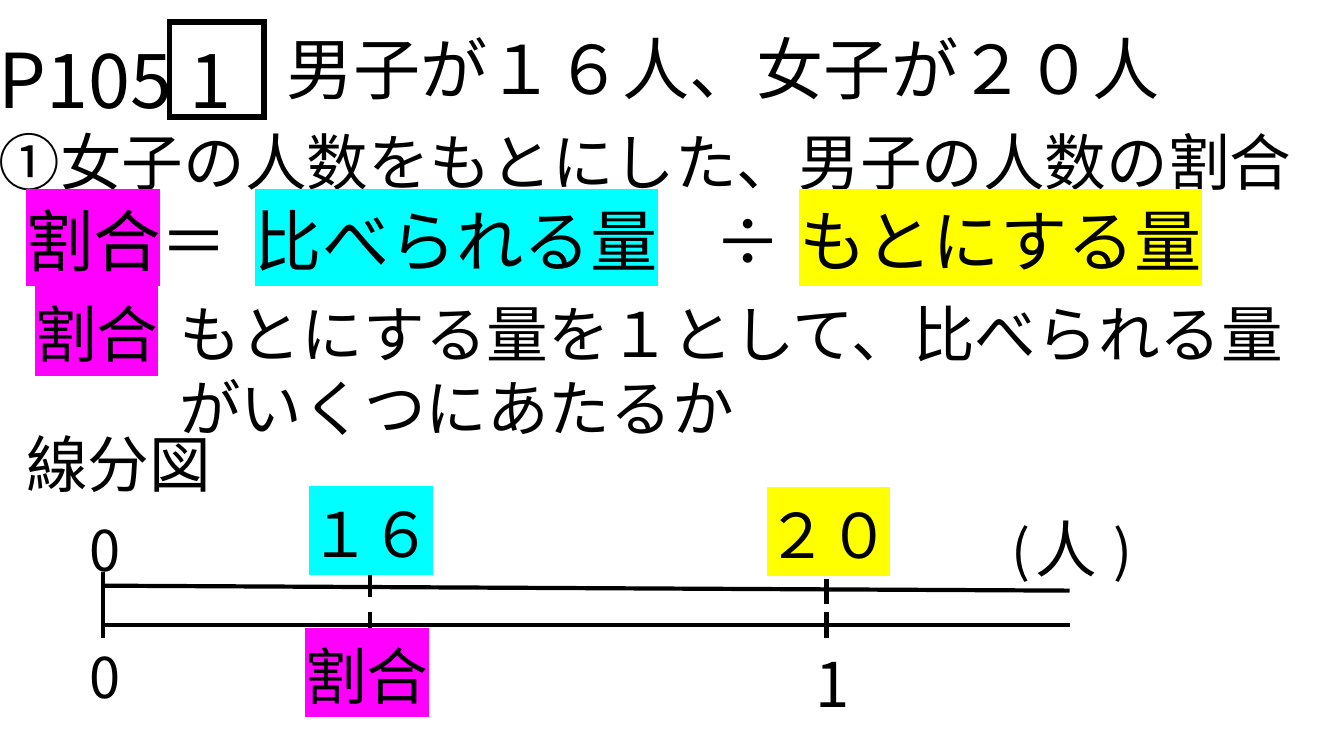
from dataclasses import dataclass
from typing import NamedTuple, Optional

from lxml.etree import SubElement
from pptx import Presentation
from pptx.dml.color import RGBColor
from pptx.enum.shapes import MSO_CONNECTOR as Connector, MSO_SHAPE as Preset
from pptx.enum.text import MSO_ANCHOR as Anchor, MSO_AUTO_SIZE as AutoSize, PP_ALIGN as Align
from pptx.oxml.ns import qn
from pptx.util import Inches, Pt


@dataclass(frozen=True)
class Theme:
    font: str = "Noto Sans CJK JP"
    ink: str = "000000"
    paper: str = "FFFFFF"
    ratio: str = "FF00FF"
    compared: str = "00FFFF"
    base: str = "FFFF00"
    page: int = 54
    large: int = 48
    normal: int = 44
    small: int = 40
    rule: int = 3
    frame: int = 4


class Box(NamedTuple):
    """Left, top, width and height in percent of the slide."""
    x: float
    y: float
    w: float
    h: float


class Line(NamedTuple):
    text: str
    size: int
    mark: Optional[str] = None


class Label(NamedTuple):
    box: Box
    lines: tuple[Line, ...]
    fill: Optional[str] = None


class Rule(NamedTuple):
    """End points in percent of the slide."""
    x1: float
    y1: float
    x2: float
    y2: float


T = Theme()
WIDTH, HEIGHT = Inches(13.33), Inches(7.5)

# Shared rows and columns, in percent of the slide
FORMULA, DEFINITION = 25.73, 38.53
TALL, MEDIUM, SHORT = 12.13, 11.2, 10.27
WORD = 10.75
ZERO, SIXTEEN, TWENTY, END = 7.65, 27.53, 61.5, 79.58
UPPER, LOWER, FOOT = 77.47, 82.67, 84.4

TITLE = Label(Box(20.55, 2.93, 73.88, TALL), (Line("男子が１６人、女子が２０人", T.large),))
NUMBER_FRAME = Box(12.6, 2.93, 7.05, 12.53)

LABELS = (
    Label(Box(-0.83, 3.73, 100, 23.33), (
        Line("P105 1", T.page),
        Line("①女子の人数をもとにした、男子の人数の割合", T.normal))),
    Label(Box(1.2, FORMULA, 12.5, TALL), (Line("割合", T.large, T.ratio),)),
    Label(Box(11.2, FORMULA, 7, TALL), (Line("＝", T.large),)),
    Label(Box(52.4, FORMULA, 7, TALL), (Line("÷", T.large),)),
    Label(Box(18.23, FORMULA, 32.48, TALL), (Line("比べられる量", T.large, T.compared),), T.paper),
    Label(Box(58.73, FORMULA, 33.68, TALL), (Line("もとにする量", T.large, T.base),), T.paper),
    Label(Box(1.88, DEFINITION, WORD, MEDIUM), (Line("割合", T.normal, T.ratio),)),
    Label(Box(12.6, DEFINITION, 84.1, 21.07), (
        Line("もとにする量を１として、比べられる量がいくつにあたるか", T.normal),)),
    Label(Box(1.2, 55.73, 28.43, MEDIUM), (Line("線分図", T.normal),)),
    Label(Box(5.93, 67.6, 3.23, SHORT), (Line("0", T.small),)),
    Label(Box(5.93, FOOT, 3.23, SHORT), (Line("0", T.small),)),
    Label(Box(22.28, 64.93, 12, MEDIUM), (Line("１６", T.normal, T.compared),)),
    Label(Box(56.33, 65.07, 12, MEDIUM), (Line("２０", T.normal, T.base),)),
    Label(Box(21.98, 83.73, WORD, MEDIUM), (Line("割合", T.normal, T.ratio),)),
    Label(Box(59.93, 84.8, 3.23, MEDIUM), (Line("1", T.normal),)),
    Label(Box(74.55, 67.6, 12, SHORT), (Line("(　)", T.small),)),
    Label(Box(76.28, 66.93, 6.38, MEDIUM), (Line("人", T.normal),)),
)

RULES = (
    Rule(ZERO, UPPER, END, 78.13),
    Rule(ZERO, LOWER, END, LOWER),
    Rule(ZERO, 75.6, ZERO, FOOT),
    Rule(SIXTEEN, 75.47, SIXTEEN, 78.93),
    Rule(TWENTY, 76.53, TWENTY, 79.87),
    *(Rule(x, 80.93, x, FOOT) for x in (SIXTEEN, TWENTY)),
)


def across(share: float) -> int:
    return round(WIDTH * share / 100)


def down(share: float) -> int:
    return round(HEIGHT * share / 100)


def place(box: Box) -> tuple[int, int, int, int]:
    return across(box.x), down(box.y), across(box.w), down(box.h)


def write(tf, lines: tuple[Line, ...]) -> None:
    """Fill a text frame, with East Asian font and highlights."""
    tf.word_wrap = True
    tf.auto_size = AutoSize.NONE
    tf.vertical_anchor = Anchor.TOP
    for i, line in enumerate(lines):
        p = tf.add_paragraph() if i else tf.paragraphs[0]
        p.alignment = Align.LEFT
        p.font.size = Pt(line.size)
        p.font.color.rgb = RGBColor.from_string(T.ink)
        p.font.name = T.font
        SubElement(p._p.pPr.find(qn("a:defRPr")), qn("a:ea"), typeface=T.font)
        r = p.add_run()
        r.text = line.text
        if line.mark:
            highlight = SubElement(r._r.get_or_add_rPr(), qn("a:highlight"))
            SubElement(highlight, qn("a:srgbClr"), val=line.mark)


def add_title(s, label: Label) -> None:
    title = s.shapes.title
    title.left, title.top, title.width, title.height = place(label.box)
    write(title.text_frame, label.lines)


def add_label(s, label: Label) -> None:
    sp = s.shapes.add_textbox(*place(label.box))
    if label.fill:
        sp.fill.solid()
        sp.fill.fore_color.rgb = RGBColor.from_string(label.fill)
    write(sp.text_frame, label.lines)


def add_frame(s, box: Box) -> None:
    """Add an unfilled frame with sharp corners."""
    sp = s.shapes.add_shape(Preset.RECTANGLE, *place(box))
    sp.shadow.inherit = False
    sp.fill.background()
    sp.line.color.rgb = RGBColor.from_string(T.ink)
    sp.line.width = Pt(T.frame)
    SubElement(sp._element.spPr.find(qn("a:ln")), qn("a:miter"), lim="800000")


def add_rule(s, rule: Rule) -> None:
    line = s.shapes.add_connector(Connector.STRAIGHT, across(rule.x1), down(rule.y1),
                                  across(rule.x2), down(rule.y2))
    line.line.color.rgb = RGBColor.from_string(T.ink)
    line.line.width = Pt(T.rule)
    SubElement(line._element.spPr, qn("a:effectLst"))


def main() -> None:
    prs = Presentation()
    prs.slide_width, prs.slide_height = WIDTH, HEIGHT
    s = prs.slides.add_slide(prs.slide_layouts.get_by_name("Title Only"))
    add_title(s, TITLE)
    add_frame(s, NUMBER_FRAME)
    for rule in RULES:
        add_rule(s, rule)
    for label in LABELS:
        add_label(s, label)
    prs.save("out.pptx")


if __name__ == "__main__":
    main()
